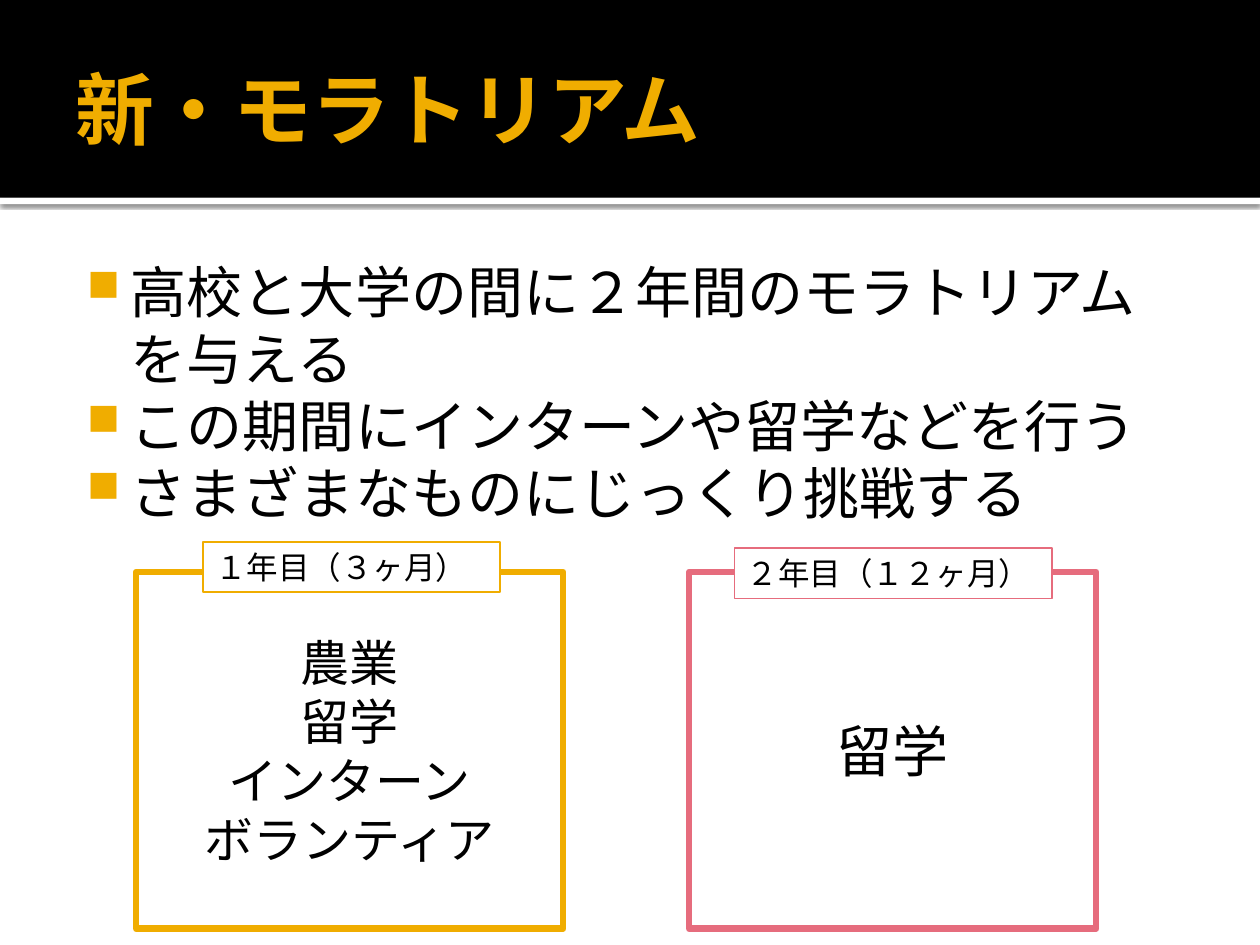
import pptx
import pptx.util
import pptx.dml.color
import pptx.enum.shapes
import pptx.enum.text
import pptx.oxml
import pptx.oxml.ns

RGBColor = pptx.dml.color.RGBColor
SHAPE = pptx.enum.shapes.MSO_SHAPE
ALIGN = pptx.enum.text.PP_ALIGN
ANCHOR = pptx.enum.text.MSO_ANCHOR
AUTO = pptx.enum.text.MSO_AUTO_SIZE

BLACK = RGBColor(0x00, 0x00, 0x00)
WHITE = RGBColor(0xFF, 0xFF, 0xFF)
GOLD = RGBColor(0xF0, 0xAD, 0x00)
PINK = RGBColor(0xE6, 0x6C, 0x7D)

COLUMNS, ROWS = 100, 75
NS = pptx.oxml.ns.nsdecls("a")
SHADOW = (f'<a:effectLst {NS}><a:outerShdw blurRad="31750" dist="10160" dir="5400000" '
          'rotWithShape="0"><a:srgbClr val="000000"><a:alpha val="60000"/></a:srgbClr>'
          '</a:outerShdw></a:effectLst>')
BULLET = (f'<a:buClr {NS}><a:srgbClr val="{GOLD}"/></a:buClr>',
          f'<a:buSzPct {NS} val="80000"/>',
          f'<a:buChar {NS} char="■"/>')


class SlideBuilder:
    """Holds the style and the current slide; boxes are (left, top, width, height) in grid cells."""

    font = "Cabin"

    def __init__(self, prs):
        self.prs = prs
        self.s = prs.slides.add_slide(prs.slide_layouts[5])

    def place(self, box):
        col, row = self.prs.slide_width / COLUMNS, self.prs.slide_height / ROWS
        left, top, width, height = box
        return [round(v) for v in (left * col, top * row, width * col, height * row)]

    def add_text(self, tf, lines, size, color=BLACK, bold=False, align=ALIGN.LEFT,
                 insets=(0.1, 0.05, 0.1, 0.05), **frame):
        sides = ("margin_left", "margin_top", "margin_right", "margin_bottom")
        settings = {"word_wrap": True, "auto_size": AUTO.NONE,
                    "vertical_anchor": ANCHOR.TOP, **frame}
        settings.update(zip(sides, map(pptx.util.Inches, insets)))
        for name, value in settings.items():
            setattr(tf, name, value)
        for i, line in enumerate(lines):
            p = tf.add_paragraph() if i else tf.paragraphs[0]
            p.alignment = align
            r = p.add_run()
            r.text = line
            for name, value in {"name": self.font, "size": pptx.util.Pt(size),
                                "bold": bold}.items():
                setattr(r.font, name, value)
            r.font.color.rgb = color
            r._r.get_or_add_rPr().append(
                pptx.oxml.parse_xml(f'<a:ea {NS} typeface="{self.font}"/>'))

    def title(self, box, text, size):
        sp = self.s.shapes.title
        sp.left, sp.top, sp.width, sp.height = self.place(box)
        self.add_text(sp.text_frame, [text], size, GOLD, True,
                      insets=(0.1, 0.05, 0.05, 0.05), vertical_anchor=ANCHOR.MIDDLE)
        sp.element.getparent().append(sp.element)  # in front of the band

    def bullets(self, box, lines, size):
        sp = self.s.shapes.add_textbox(*self.place(box))
        self.add_text(sp.text_frame, lines, size, insets=(0.06, 0.1, 0.1, 0.05))
        for p in sp.text_frame.paragraphs:
            pPr = p._p.get_or_add_pPr()
            pPr.set("marL", str(pptx.util.Inches(0.48)))
            pPr.set("indent", str(pptx.util.Inches(-0.35)))
            for xml in BULLET:
                pPr.append(pptx.oxml.parse_xml(xml))

    def rect(self, box, fill=WHITE, line=None, weight=1, kind=SHAPE.RECTANGLE):
        sp = self.s.shapes.add_shape(kind, *self.place(box))
        sp.shadow.inherit = False
        sp.fill.solid()
        sp.fill.fore_color.rgb = fill
        if line is None:
            sp.line.fill.background()
        else:
            sp.line.color.rgb = line
            sp.line.width = pptx.util.Pt(weight)
        return sp

    def band(self, height, rule):
        """Black title band with a shadowed white rule under it."""
        sp = self.rect((0, height, COLUMNS, rule))
        spPr = sp.element.spPr
        effects = spPr.find(pptx.oxml.ns.qn("a:effectLst"))
        spPr.replace(effects, pptx.oxml.parse_xml(SHADOW))
        self.rect((0, 0, COLUMNS, height), BLACK)

    def panel(self, box, label_box, label, lines, size, color, kind=SHAPE.RECTANGLE):
        """Outlined box with a label sitting on its top edge."""
        sp = self.rect(box, line=color, weight=3.78, kind=kind)
        self.add_text(sp.text_frame, lines, size, align=ALIGN.CENTER,
                      vertical_anchor=ANCHOR.MIDDLE)
        sp = self.rect(label_box, line=color)
        self.add_text(sp.text_frame, [label], 18, auto_size=AUTO.SHAPE_TO_FIT_TEXT)


def main():
    prs = pptx.Presentation()
    prs.slide_width, prs.slide_height = pptx.util.Inches(10), pptx.util.Inches(7.5)
    b = SlideBuilder(prs)
    b.band(15.7, 0.5)
    b.title((5, 1.7, 90, 13.7), "新・モラトリアム", 45)
    b.bullets((5, 19.4, 90, 24.1), [
        "高校と大学の間に２年間のモラトリアムを与える",
        "この期間にインターンや留学などを行う",
        "さまざまなものにじっくり挑戦する",
    ], 32)
    top, height = 45.4, 28.3
    b.panel((10.8, top, 33.9, height), (16.1, 43, 23.6, 4), "１年目（３ヶ月）",
            ["農業", "留学", "インターン", "ボランティア"], 28, GOLD)
    b.panel((54.7, top, 32.3, height), (58.3, 43.5, 25.2, 4), "２年目（１２ヶ月）",
            ["留学"], 32, PINK, SHAPE.FLOWCHART_PROCESS)
    prs.save("out.pptx")


if __name__ == "__main__":
    main()
